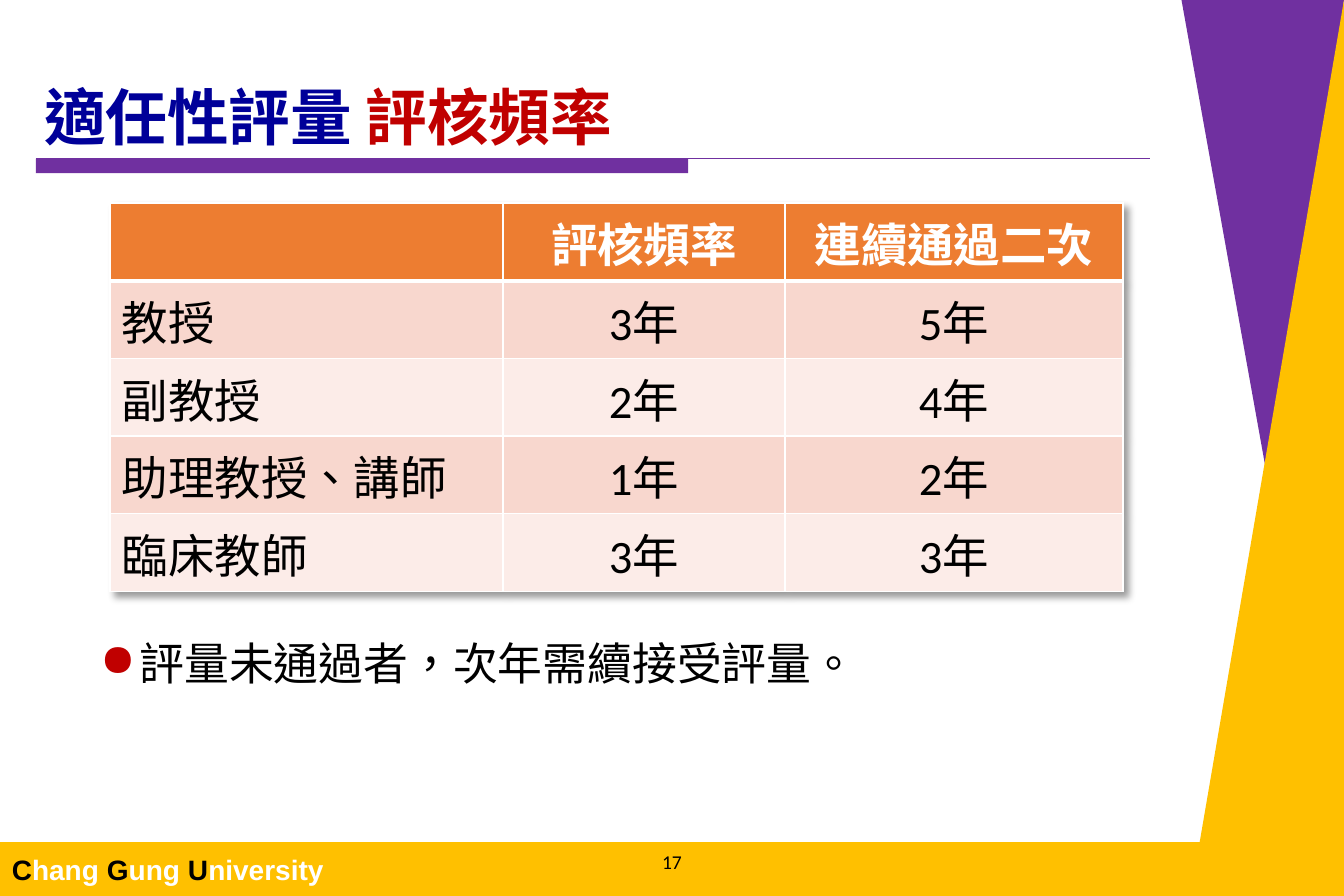
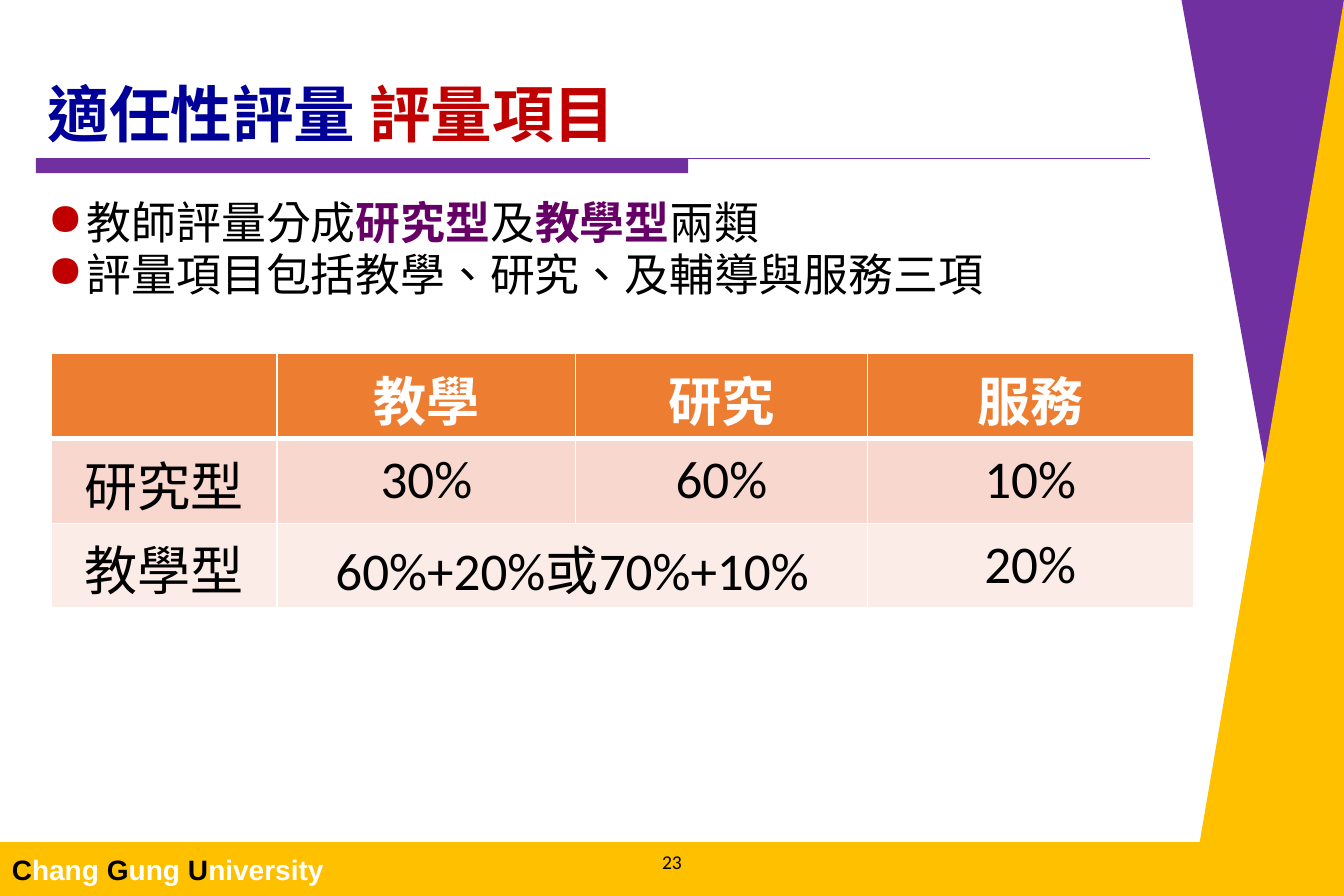
from lxml import etree
from pptx import Presentation
from pptx.dml.color import RGBColor
from pptx.enum import lang, shapes, text
from pptx.oxml import ns

PX = 9144  # 100 px to the inch
SLIDE_W, SLIDE_H = 1125, 750

PURPLE = RGBColor(0x70, 0x30, 0xA0)
GOLD = RGBColor(0xFF, 0xC0, 0x00)
NAVY = RGBColor(0x00, 0x00, 0x99)
RED = RGBColor(0xC0, 0x00, 0x00)
PLUM = RGBColor(0x66, 0x00, 0x66)
ORANGE = RGBColor(0xED, 0x7D, 0x31)
ROSE = RGBColor(0xF8, 0xD7, 0xCE)
PALE_ROSE = RGBColor(0xFC, 0xEC, 0xE8)
WHITE = RGBColor(0xFF, 0xFF, 0xFF)
BLACK = RGBColor(0x00, 0x00, 0x00)

CJK_FONT = "Noto Sans CJK SC"
LEFT, CENTER = text.PP_ALIGN.LEFT, text.PP_ALIGN.CENTER
TOP, MIDDLE, BOTTOM = (text.MSO_ANCHOR.TOP, text.MSO_ANCHOR.MIDDLE,
                       text.MSO_ANCHOR.BOTTOM)

UNIVERSITY = [("C", BLACK), ("hang ", WHITE), ("G", BLACK), ("ung ", WHITE),
              ("U", BLACK), ("niversity", WHITE)]
SIDE_WEDGES = [
    (PURPLE, [(1125, 0), (989, 0), (1069, 445)]),
    (GOLD, [(1125, 0), (1004, 706), (1125, 706)]),
]

# Runs are (text, colour) or (text, colour, bold).
SLIDES = [
    {
        "number": "17",
        "topic": "評核頻率",
        "title_box": (27, 34, 1051, 100),
        "bullets": [[("評量未通過者，次年需續接受評量。", BLACK)]],
        "bullet_box": (74, 532, 984, 121),
        "table": {
            "at": (92, 170), "columns": [329, 236, 283], "row_height": 65,
            "size": 28, "label_align": LEFT, "header_anchor": MIDDLE,
            "shadow": True, "merges": [],
            "rows": [["", "評核頻率", "連續通過二次"],
                     ["教授", "3年", "5年"],
                     ["副教授", "2年", "4年"],
                     ["助理教授、講師", "1年", "2年"],
                     ["臨床教師", "3年", "3年"]],
        },
    },
    {
        "number": "23",
        "topic": "評量項目",
        "title_box": (30, 40, 933, 91),
        "bullets": [
            [("教師評量分成", BLACK), ("研究型", PLUM, True), ("及", BLACK),
             ("教學型", PLUM, True), ("兩類", BLACK)],
            [("評量項目包括教學、研究、及輔導與服務三項", BLACK)],
        ],
        "bullet_box": (30, 163, 933, 558),
        "table": {
            "at": (43, 296), "columns": [189, 250, 244, 273], "row_height": 71,
            "size": 32, "label_align": CENTER, "header_anchor": TOP,
            "shadow": False, "merges": [((2, 1), (2, 2))],
            "rows": [["", "教學", "研究", "服務"],
                     ["研究型", "30%", "60%", "10%"],
                     ["教學型", "60%+20%或70%+10%", "", "20%"]],
        },
    },
]


def emu(*lengths):
    return [round(length * PX) for length in lengths]


def add_xml(parent, tag, **attributes):
    return etree.SubElement(parent, ns.qn(tag), attributes)


def add_color(parent, color):
    return add_xml(parent, "a:srgbClr", val=str(color))


def write(paragraph, runs, size, font, bold=False, align=LEFT):
    paragraph.alignment = align
    paragraph.font.size = round(size * 12700)
    paragraph.font.name = font
    paragraph.font.bold = bold
    defaults = paragraph._p.pPr.find(ns.qn("a:defRPr"))
    add_xml(defaults, "a:ea", typeface=CJK_FONT)
    for words, color, *emphasis in runs:
        run = paragraph.add_run()
        run.text = words
        run.font.color.rgb = color
        run.font.language_id = lang.MSO_LANGUAGE_ID.TRADITIONAL_CHINESE
        if emphasis:
            run.font.bold = emphasis[0]


def add_text_frame(slide, box, anchor):
    frame = slide.shapes.add_textbox(*emu(*box)).text_frame
    frame.word_wrap = True
    frame.vertical_anchor = anchor
    return frame


def paint(shape, color):
    shape.fill.solid()
    shape.fill.fore_color.rgb = color
    shape.line.fill.background()
    shape.shadow.inherit = False


def add_bar(slide, box, color):
    bar = slide.shapes.add_shape(shapes.MSO_SHAPE.RECTANGLE, *emu(*box))
    paint(bar, color)
    return bar


def add_frame(slide, number):
    """Draw the wedges, title rule, footer and page number."""
    for color, corners in SIDE_WEDGES:
        outline = slide.shapes.build_freeform(*corners[0], scale=PX)
        outline.add_line_segments(corners[1:], close=True)
        paint(outline.convert_to_shape(), color)

    footer = add_bar(slide, (0, 705, SLIDE_W, SLIDE_H - 705), GOLD).text_frame
    footer.vertical_anchor = MIDDLE
    write(footer.paragraphs[0], UNIVERSITY, 16.9, "Arial", bold=True)

    rule = slide.shapes.add_connector(shapes.MSO_CONNECTOR.STRAIGHT,
                                      *emu(30, 133, 963, 133))
    rule.line.color.rgb = PURPLE
    rule.line.width = 9525
    add_xml(rule._element.spPr, "a:effectLst")
    add_bar(slide, (30, 133, 546, 12), PURPLE)

    page = add_text_frame(slide, (446, 707, 233, 28), MIDDLE)
    write(page.paragraphs[0], [(number, BLACK)], 11.8, "Calibri", align=CENTER)


def add_title(slide, box, topic):
    title = add_text_frame(slide, box, BOTTOM).paragraphs[0]
    title.line_spacing = 0.9
    write(title, [("適任性評量 ", NAVY), (topic, RED)], 37.1,
          "Times New Roman", bold=True)


def add_bullets(slide, box, bullets):
    frame = add_text_frame(slide, box, TOP)
    for index, runs in enumerate(bullets):
        paragraph = frame.add_paragraph() if index else frame.paragraphs[0]
        paragraph.line_spacing = 0.9
        paragraph.space_after = 2 * 12700
        properties = paragraph._p.get_or_add_pPr()
        hang = 33 * PX
        properties.set("marL", str(hang))
        properties.set("indent", str(-hang))
        add_color(add_xml(properties, "a:buClr"), RED)
        add_xml(properties, "a:buChar", char="●")
        write(paragraph, runs, 27, CJK_FONT)


def add_borders(cell, row):
    """White 1 pt edges, with a 3 pt edge below the header."""
    widths = {"L": 1, "R": 1, "T": 3 if row == 1 else 1, "B": 3 if row == 0 else 1}
    properties = cell._tc.get_or_add_tcPr()
    for side, width in widths.items():
        edge = add_xml(properties, f"a:ln{side}", w=str(width * 12700))
        add_color(add_xml(edge, "a:solidFill"), WHITE)


def add_table_shadow(table):
    effects = etree.Element(ns.qn("a:effectLst"))
    shadow = add_xml(effects, "a:outerShdw", blurRad="50800", dist="50800",
                     dir="2700000", algn="tl", rotWithShape="0")
    add_xml(add_color(shadow, BLACK), "a:alpha", val="40000")
    table._tbl.tblPr.insert(0, effects)


def add_grid(slide, spec):
    rows, columns, row_height = spec["rows"], spec["columns"], spec["row_height"]
    table = slide.shapes.add_table(
        len(rows), len(columns),
        *emu(*spec["at"], sum(columns), row_height * len(rows))).table
    table.first_row = table.horz_banding = False
    if spec["shadow"]:
        add_table_shadow(table)
    for column, width in zip(table.columns, emu(*columns)):
        column.width = width
    for r, row in enumerate(rows):
        table.rows[r].height = row_height * PX
        header = r == 0
        for c, words in enumerate(row):
            cell = table.cell(r, c)
            add_borders(cell, r)
            cell.fill.solid()
            cell.fill.fore_color.rgb = (
                ORANGE if header else ROSE if r % 2 else PALE_ROSE)
            cell.vertical_anchor = spec["header_anchor"] if header else MIDDLE
            runs = [(words, WHITE if header else BLACK)] if words else []
            write(cell.text_frame.paragraphs[0], runs, spec["size"], "Calibri",
                  bold=header, align=CENTER if c else spec["label_align"])
    for first, last in spec["merges"]:
        table.cell(*first).merge(table.cell(*last))


def main():
    deck = Presentation()
    deck.slide_width, deck.slide_height = emu(SLIDE_W, SLIDE_H)
    for content in SLIDES:
        slide = deck.slides.add_slide(deck.slide_layouts[6])
        add_frame(slide, content["number"])
        add_title(slide, content["title_box"], content["topic"])
        add_bullets(slide, content["bullet_box"], content["bullets"])
        add_grid(slide, content["table"])
    deck.save("out.pptx")


if __name__ == "__main__":
    main()
